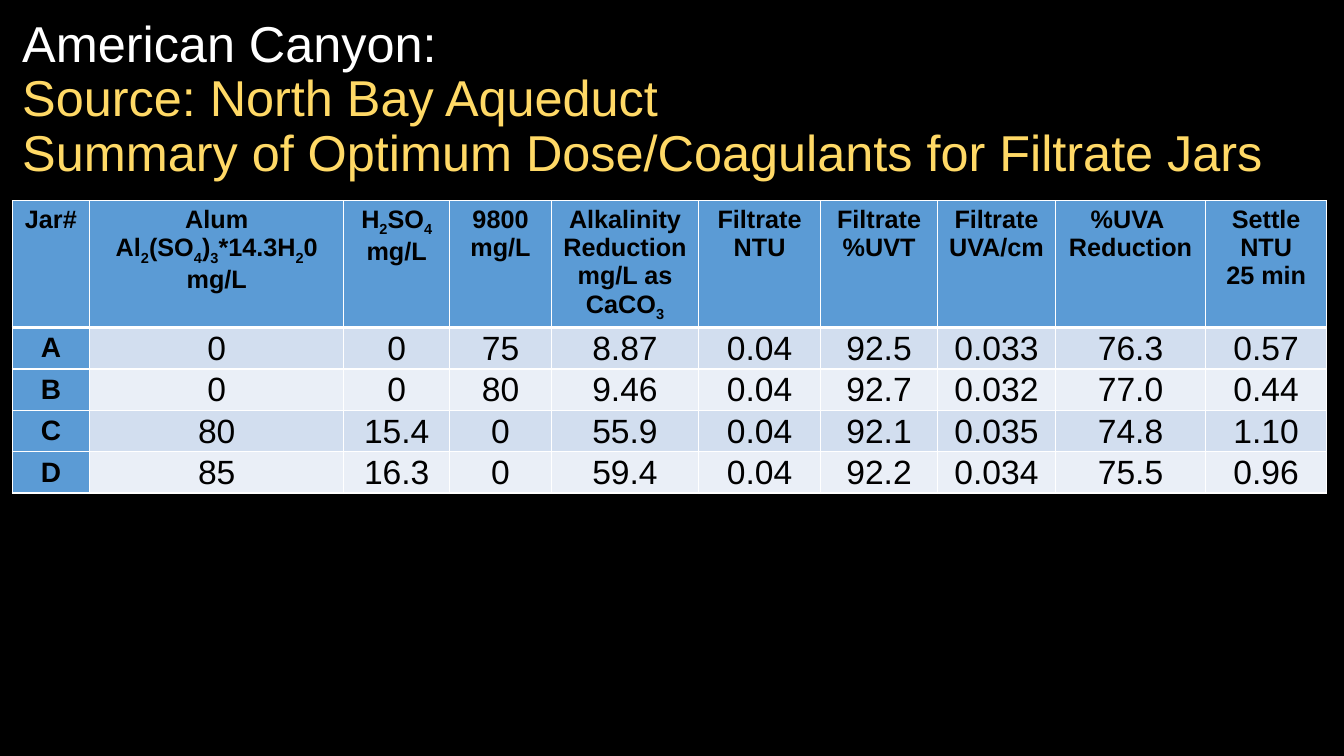
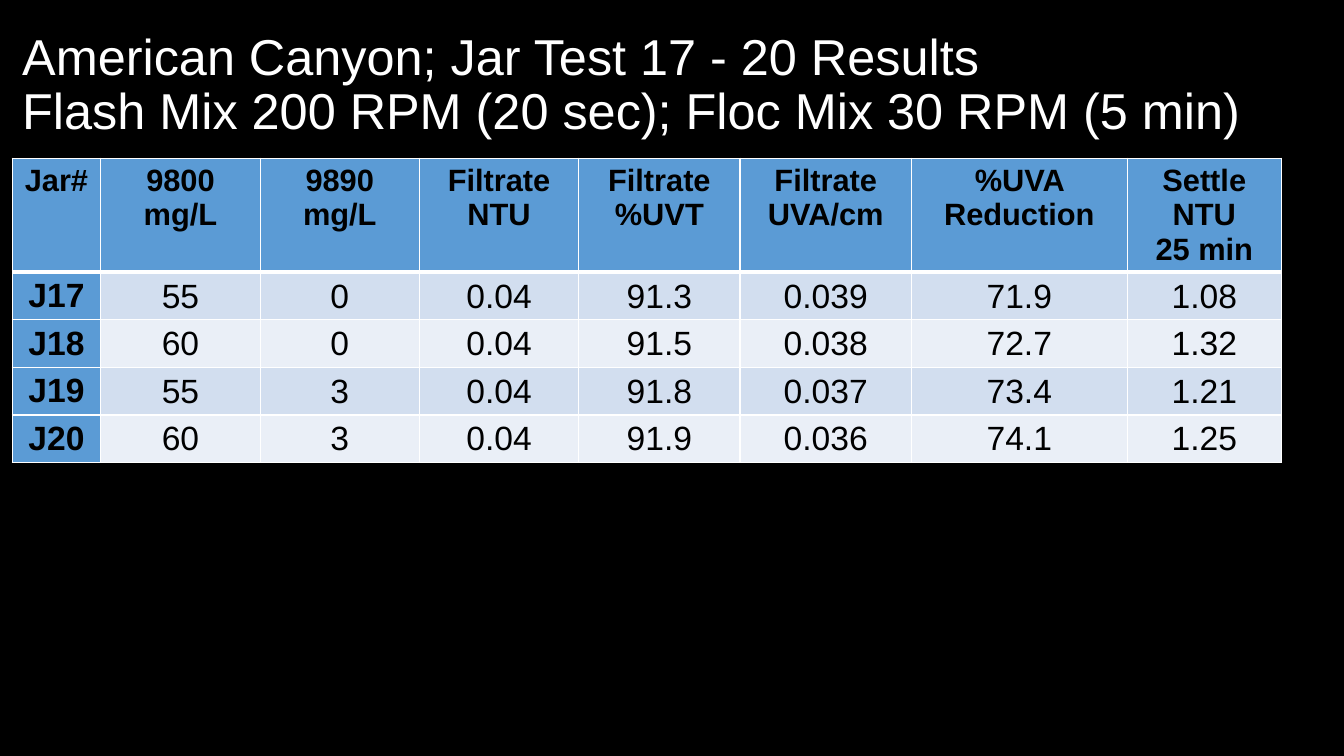
from pptx import Presentation
from pptx.dml.color import RGBColor as RGB
from pptx.enum.text import MSO_ANCHOR as ANCHOR, MSO_AUTO_SIZE as AUTOSIZE, PP_ALIGN as ALIGN
from pptx.oxml.ns import qn
from pptx.util import Inches, Pt
from lxml.etree import SubElement

BLACK = RGB(0x00, 0x00, 0x00)
WHITE = RGB(0xFF, 0xFF, 0xFF)
GOLD = RGB(0xFF, 0xD9, 0x66)
BLUE = RGB(0x5B, 0x9B, 0xD5)
BANDS = [RGB(0xD2, 0xDE, 0xEF), RGB(0xEA, 0xEF, 0xF7)]

TITLE_SIZE = 36
VALUE_SIZE = 24
LEFT = 0.12
THIN, THICK = 1, 3
VALUE_FORMAT = {
    "vertical_anchor": ANCHOR.MIDDLE,
    "margin_left": Inches(0.01),
    "margin_right": Inches(0.01),
    "margin_top": Inches(0.01),
    "margin_bottom": 0,
}

SOURCE_COLS = [0.77, 2.52, 1.05, 1.01, 1.46, 1.21, 1.16, 1.17, 1.49, 1.2]
SOURCE_HEADER = [
    "Jar#", "Alum\nAl_2(SO_4)_3*14.3H_20\nmg/L", "H_2SO_4\nmg/L", "9800\nmg/L",
    "Alkalinity\nReduction\nmg/L as\nCaCO_3", "Filtrate\nNTU", "Filtrate\n%UVT",
    "Filtrate\nUVA/cm", "%UVA \nReduction", "Settle\nNTU\n25 min",
]
SOURCE_ROWS = [
    ["A", "0", "0", "75", "8.87", "0.04", "92.5", "0.033", "76.3", "0.57"],
    ["B", "0", "0", "80", "9.46", "0.04", "92.7", "0.032", "77.0", "0.44"],
    ["C", "80", "15.4", "0", "55.9", "0.04", "92.1", "0.035", "74.8", "1.10"],
    ["D", "85", "16.3", "0", "59.4", "0.04", "92.2", "0.034", "75.5", "0.96"],
]

JAR_COLS = [0.88, 1.58, 1.58, 1.58, 1.6, 1.7, 2.14, 1.53]
JAR_HEADER = [
    "Jar#", "9800\nmg/L", "9890\nmg/L", "Filtrate\nNTU", "Filtrate\n%UVT",
    "Filtrate\nUVA/cm", "%UVA Reduction", "Settle\nNTU\n25 min",
]
JAR_ROWS = [
    ["J17", "55", "0", "0.04", "91.3", "0.039", "71.9", "1.08"],
    ["J18", "60", "0", "0.04", "91.5", "0.038", "72.7", "1.32"],
    ["J19", "55", "3", "0.04", "91.8", "0.037", "73.4", "1.21"],
    ["J20", "60", "3", "0.04", "91.9", "0.036", "74.1", "1.25"],
]


def set_attrs(obj, values):
    for name, value in values.items():
        setattr(obj, name, value)


def add_run(p, text, size, color, bold=False, subscript=False):
    r = p.add_run()
    r.text = text
    set_attrs(r.font, {"name": "Arial", "size": Pt(size), "bold": bold})
    r.font.color.rgb = color
    if subscript:
        r.font._element.set("baseline", "-25000")


def style_master(prs):
    master = prs.slide_master
    master.background.fill.solid()
    master.background.fill.fore_color.rgb = BLACK
    for props in master.element.find(".//" + qn("p:titleStyle")).iter(qn("a:defRPr")):
        props.set("sz", str(TITLE_SIZE * 100))


def add_title(slide, height, lines):
    sp = slide.shapes.title
    set_attrs(sp, {"left": Inches(LEFT), "top": Inches(0.13),
                   "width": Inches(13.03), "height": Inches(height)})
    tf = sp.text_frame
    set_attrs(tf, {"word_wrap": True, "auto_size": AUTOSIZE.NONE,
                   "vertical_anchor": ANCHOR.MIDDLE})
    p = tf.paragraphs[0]
    set_attrs(p, {"alignment": ALIGN.LEFT, "line_spacing": 0.9})
    for i, (text, color) in enumerate(lines):
        if i:
            p.add_line_break()
        add_run(p, text, TITLE_SIZE, color)


def set_borders(cell, top, bottom):
    props = cell._tc.get_or_add_tcPr()
    for side, width in {"L": THIN, "R": THIN, "T": top, "B": bottom}.items():
        ln = SubElement(props, qn("a:ln" + side), w=str(Pt(width)))
        SubElement(SubElement(ln, qn("a:solidFill")), qn("a:srgbClr"), val=str(WHITE))


def fill_cell(cell, text, size, bold, fill):
    cell.fill.solid()
    cell.fill.fore_color.rgb = fill
    tf = cell.text_frame
    for i, line in enumerate(text.split("\n")):
        p = tf.add_paragraph() if i else tf.paragraphs[0]
        p.alignment = ALIGN.CENTER
        first, *rest = line.split("_")
        add_run(p, first, size, BLACK, bold)
        for part in rest:
            add_run(p, part[0], size, BLACK, bold, subscript=True)
            if part[1:]:
                add_run(p, part[1:], size, BLACK, bold)


def add_results(slide, top, cols, heights, header, rows, header_size, label_size):
    header_height, row_height = heights
    table = slide.shapes.add_table(
        len(rows) + 1, len(cols), Inches(LEFT), Inches(top), Inches(sum(cols)),
        Inches(header_height + row_height * len(rows))).table
    set_attrs(table, {"first_row": True, "first_col": True, "horz_banding": False})
    for col, width in zip(table.columns, cols):
        col.width = Inches(width)
    for i, texts in enumerate([header] + rows):
        table.rows[i].height = Inches(row_height if i else header_height)
        for j, text in enumerate(texts):
            cell = table.cell(i, j)
            set_borders(cell, THICK if i == 1 else THIN, THIN if i else THICK)
            if i and j:
                set_attrs(cell, VALUE_FORMAT)
                fill_cell(cell, text, VALUE_SIZE, False, BANDS[(i - 1) % 2])
            else:
                fill_cell(cell, text, label_size if i else header_size, True, BLUE)


def main():
    prs = Presentation()
    set_attrs(prs, {"slide_width": Inches(13.33), "slide_height": Inches(7.5)})
    style_master(prs)
    layout = prs.slide_layouts.get_by_name("Title Only")

    s = prs.slides.add_slide(layout)
    add_title(s, 1.73, [
        ("American Canyon: ", WHITE),
        ("Source: North Bay Aqueduct", GOLD),
        ("Summary of Optimum Dose/Coagulants for Filtrate Jars", GOLD),
    ])
    add_results(s, 1.99, SOURCE_COLS, (1.26, 0.41), SOURCE_HEADER, SOURCE_ROWS, 18, 20)

    s = prs.slides.add_slide(layout)
    add_title(s, 1.45, [
        ("American Canyon; Jar Test 17 - 20 Results", WHITE),
        ("Flash Mix 200 RPM (20 sec); Floc Mix 30 RPM (5 min)", WHITE),
    ])
    add_results(s, 1.57, JAR_COLS, (1.13, 0.47), JAR_HEADER, JAR_ROWS, 22, 24)

    prs.save("out.pptx")


if __name__ == "__main__":
    main()
